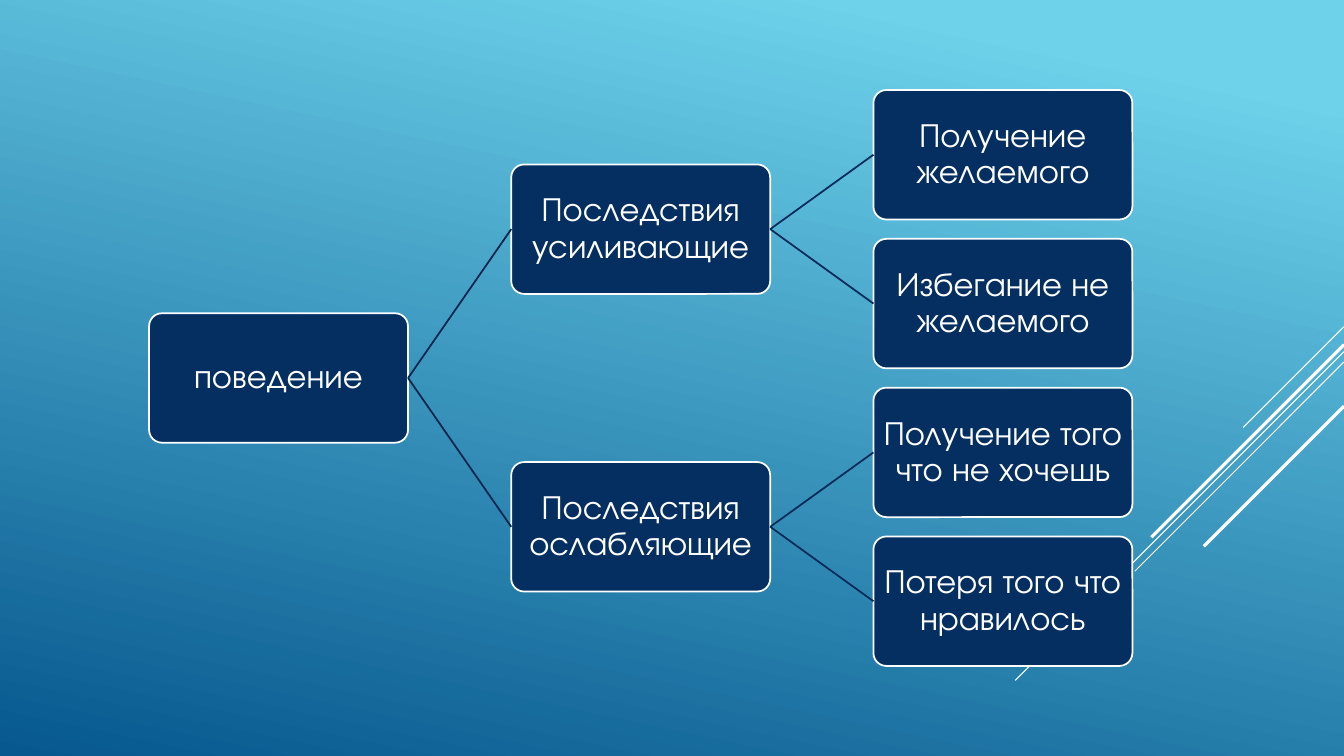
from dataclasses import dataclass
from typing import Optional

from lxml.etree import SubElement
from pptx import Presentation
from pptx.dml.color import RGBColor
from pptx.enum.shapes import MSO_CONNECTOR, MSO_SHAPE
from pptx.enum.text import MSO_ANCHOR, PP_ALIGN
from pptx.oxml.ns import qn
from pptx.shapes.autoshape import Shape
from pptx.shapes.connector import Connector
from pptx.slide import Slide
from pptx.util import Pt

COLORS = {
    "sky": "6ED2EB",
    "deep": "06588E",
    "navy": "052F61",
    "white": "FFFFFF",
    "first_branch": "04264E",
    "second_branch": "052B58",
}
FONT = "TeX Gyre Adventor"
PAGE_WIDTH, PAGE_HEIGHT = 960, 540
BOX_WIDTH, BOX_HEIGHT = 185, 92.5
FIRST_LEFT, COLUMN_PITCH = 106.5, 258.7
ROW_PITCH = 106.3
BRANCH_COLORS = {1: "first_branch", 2: "second_branch"}


@dataclass(frozen=True)
class Streak:
    top: float
    run: float
    weight: float


@dataclass(frozen=True)
class Node:
    text: str
    column: int
    row: float
    parent: Optional["Node"] = None


STREAKS = [
    Streak(233.4, 72, 0.75),
    Streak(251.2, 234.8, 0.75),
    Streak(258.6, 149.4, 0.75),
    Streak(246.2, 137.6, 2.25),
    Streak(290.1, 100.2, 2.25),
]

BEHAVIOUR = Node("поведение", 0, 0)
STRENGTHENING = Node("Последствия усиливающие", 1, -1, BEHAVIOUR)
WEAKENING = Node("Последствия ослабляющие", 1, 1, BEHAVIOUR)
NODES = [
    BEHAVIOUR,
    STRENGTHENING,
    Node("Получение желаемого", 2, -1.5, STRENGTHENING),
    Node("Избегание не желаемого", 2, -0.5, STRENGTHENING),
    WEAKENING,
    Node("Получение того что не хочешь", 2, 0.5, WEAKENING),
    Node("Потеря того что нравилось", 2, 1.5, WEAKENING),
]


def color(name: str) -> RGBColor:
    return RGBColor.from_string(COLORS[name])


def paint_background(page: Slide) -> None:
    fill = page.background.fill
    fill.gradient()
    fill.gradient_angle = 258
    for stop, position, name in zip(fill.gradient_stops, (0.1, 1), ("sky", "deep")):
        stop.position = position
        stop.color.rgb = color(name)


def add_line(page: Slide, start: tuple[float, float], end: tuple[float, float],
             *, stroke: str, weight: float) -> Connector:
    line = page.shapes.add_connector(
        MSO_CONNECTOR.STRAIGHT, *(Pt(value) for value in (*start, *end)))
    line.line.color.rgb = color(stroke)
    line.line.width = Pt(weight)
    SubElement(line._element.spPr, qn("a:effectLst"))
    return line


def write_text(box: Shape, text: str, *, size: float, ink: str,
               spacing: float, margin: float) -> None:
    frame = box.text_frame
    frame.word_wrap = True
    frame.vertical_anchor = MSO_ANCHOR.MIDDLE
    frame.margin_left = frame.margin_right = Pt(margin)
    frame.margin_top = frame.margin_bottom = Pt(margin)
    para = frame.paragraphs[0]
    para.alignment = PP_ALIGN.CENTER
    para.line_spacing = spacing
    span = para.add_run()
    span.text = text
    span.font.name = FONT
    span.font.size = Pt(size)
    span.font.color.rgb = color(ink)


def add_node(page: Slide, node: Node) -> Shape:
    left = FIRST_LEFT + node.column * COLUMN_PITCH
    top = (PAGE_HEIGHT - BOX_HEIGHT) / 2 + node.row * ROW_PITCH
    box = page.shapes.add_shape(
        MSO_SHAPE.ROUNDED_RECTANGLE, Pt(left), Pt(top), Pt(BOX_WIDTH), Pt(BOX_HEIGHT))
    box.adjustments[0] = 0.1
    box.shadow.inherit = False
    box.fill.solid()
    box.fill.fore_color.rgb = color("navy")
    box.line.color.rgb = color("white")
    box.line.width = Pt(1.25)
    write_text(box, node.text, size=24, ink="white", spacing=0.9, margin=1.5)
    return box


def join_boxes(page: Slide, parent: Shape, child: Shape, stroke: str) -> None:
    branch = add_line(page, (0, 0), (0, 0), stroke=stroke, weight=1.25)
    branch.begin_connect(parent, 3)
    branch.end_connect(child, 1)


def main() -> None:
    deck = Presentation()
    deck.slide_width, deck.slide_height = Pt(PAGE_WIDTH), Pt(PAGE_HEIGHT)
    page = deck.slides.add_slide(deck.slide_layouts[6])
    paint_background(page)
    for streak in STREAKS:
        add_line(page, (PAGE_WIDTH, streak.top),
                 (PAGE_WIDTH - streak.run, streak.top + streak.run),
                 stroke="white", weight=streak.weight)
    boxes: dict[Node, Shape] = {}
    for node in NODES:
        boxes[node] = add_node(page, node)
        if node.parent:
            join_boxes(page, boxes[node.parent], boxes[node], BRANCH_COLORS[node.column])
    deck.save("out.pptx")


if __name__ == "__main__":
    main()
